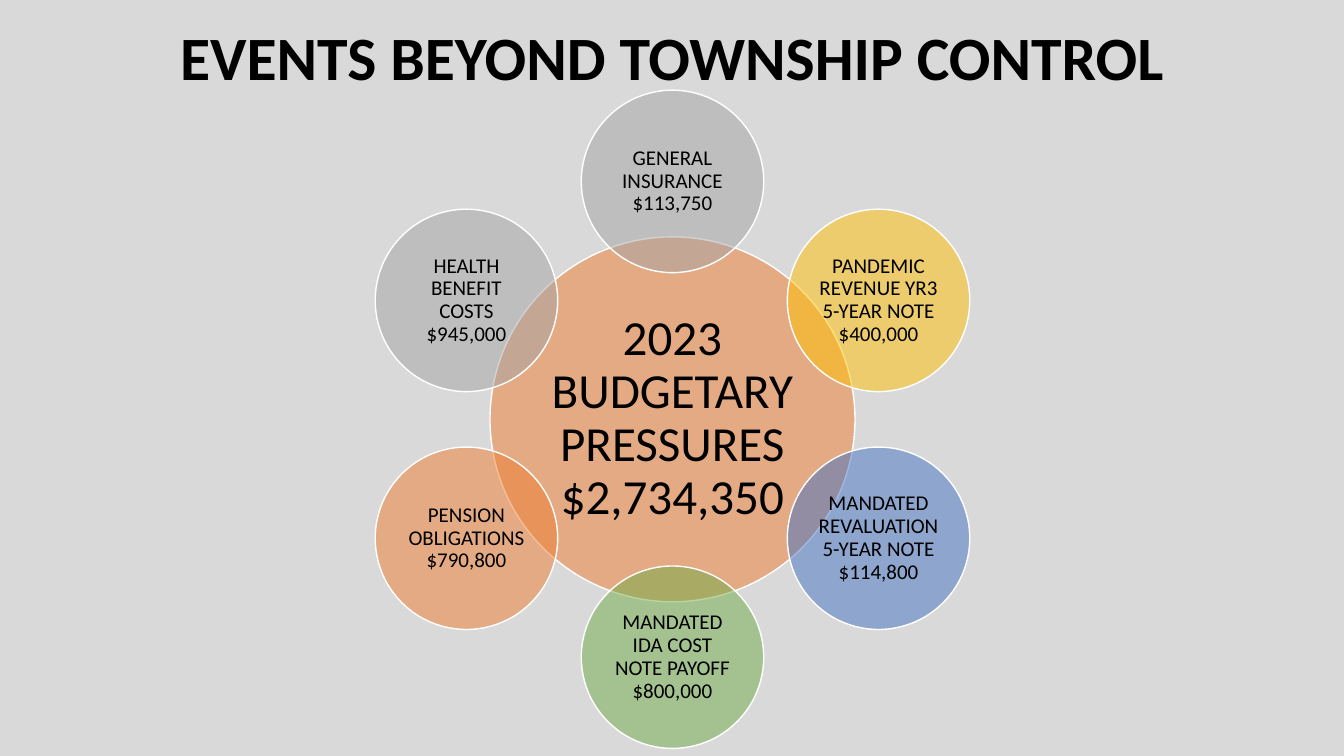
import math
from dataclasses import dataclass

import pptx
import pptx.dml.color
import pptx.enum.shapes
import pptx.enum.text
import pptx.oxml.ns
import pptx.util
from lxml import etree

Inches = pptx.util.Inches


@dataclass(frozen=True)
class Theme:
    font: str = "Calibri"
    background: str = "D9D9D9"
    text: str = "000000"
    outline: str = "FFFFFF"
    orange: str = "ED7D31"
    gray: str = "A5A5A5"
    gold: str = "FFC000"
    blue: str = "4472C4"
    green: str = "70AD47"
    opacity: int = 50
    title_size: int = 44
    hub_size: int = 35
    satellite_size: int = 15


def color(value):
    return pptx.dml.color.RGBColor.from_string(value)


class SlideBuilder:
    def __init__(self, slide, theme):
        self.slide = slide
        self.theme = theme
        fill = slide.background.fill
        fill.solid()
        fill.fore_color.rgb = color(theme.background)

    def set_text(self, text_frame, text, size, bold=False):
        text_frame.text = text
        text_frame.word_wrap = True
        text_frame.auto_size = pptx.enum.text.MSO_AUTO_SIZE.NONE
        text_frame.vertical_anchor = pptx.enum.text.MSO_ANCHOR.MIDDLE
        paragraph = text_frame.paragraphs[0]
        paragraph.alignment = pptx.enum.text.PP_ALIGN.CENTER
        paragraph.line_spacing = 0.9
        font = paragraph.runs[0].font
        font.name = self.theme.font
        font.size = pptx.util.Pt(size)
        font.bold = bold
        font.color.rgb = color(self.theme.text)

    def title(self, text, left, top, width, height):
        title = self.slide.shapes.title
        title.left, title.top = Inches(left), Inches(top)
        title.width, title.height = Inches(width), Inches(height)
        self.set_text(title.text_frame, text, self.theme.title_size, bold=True)

    def group(self):
        return self.slide.shapes.add_group_shape()

    def circle(self, group, center_x, center_y, diameter, fill_color, text, size, inset):
        shape = group.shapes.add_shape(
            pptx.enum.shapes.MSO_SHAPE.OVAL,
            Inches(center_x - diameter / 2), Inches(center_y - diameter / 2),
            Inches(diameter), Inches(diameter))
        shape.shadow.inherit = False
        shape.fill.solid()
        shape.fill.fore_color.rgb = color(fill_color)
        # Transparency of the fill
        properties = shape.element.find(pptx.oxml.ns.qn("p:spPr"))
        fill_element = properties.find(pptx.oxml.ns.qn("a:solidFill"))
        alpha = etree.SubElement(fill_element[0], pptx.oxml.ns.qn("a:alpha"))
        alpha.set("val", str(self.theme.opacity * 1000))
        shape.line.color.rgb = color(self.theme.outline)
        shape.line.width = pptx.util.Pt(1)
        frame = shape.text_frame
        frame.margin_left = frame.margin_right = Inches(inset)
        frame.margin_top = frame.margin_bottom = Inches(inset)
        self.set_text(frame, text, size)


def main():
    theme = Theme()
    presentation = pptx.Presentation()
    presentation.slide_width = Inches(13.33)
    presentation.slide_height = Inches(7.5)
    slide = presentation.slides.add_slide(presentation.slide_layouts[5])
    builder = SlideBuilder(slide, theme)

    # Title
    builder.title("EVENTS BEYOND TOWNSHIP CONTROL", 0.92, 0, 11.5, 1.2)

    # Hub with the total
    center_x, center_y, hub_diameter = 6.67, 4.16, 3.62
    group = builder.group()
    builder.circle(group, center_x, center_y, hub_diameter, theme.orange,
                   "2023 BUDGETARY PRESSURES $2,734,350", theme.hub_size, 0.05)

    # Pressures around the hub, clockwise from the top
    pressures = [
        ("GENERAL INSURANCE $113,750", theme.gray),
        ("PANDEMIC REVENUE YR3 5-YEAR NOTE $400,000", theme.gold),
        ("MANDATED REVALUATION 5-YEAR NOTE $114,800", theme.blue),
        ("MANDATED IDA COST NOTE PAYOFF $800,000", theme.green),
        ("PENSION OBLIGATIONS $790,800", theme.orange),
        ("HEALTH BENEFIT COSTS $945,000", theme.gray),
    ]
    orbit = 2.36
    for index, (text, fill_color) in enumerate(pressures):
        angle = 2 * math.pi * index / len(pressures)
        builder.circle(group, center_x + orbit * math.sin(angle),
                       center_y - orbit * math.cos(angle), hub_diameter / 2,
                       fill_color, text, theme.satellite_size, 0.02)

    presentation.save("out.pptx")


if __name__ == "__main__":
    main()
